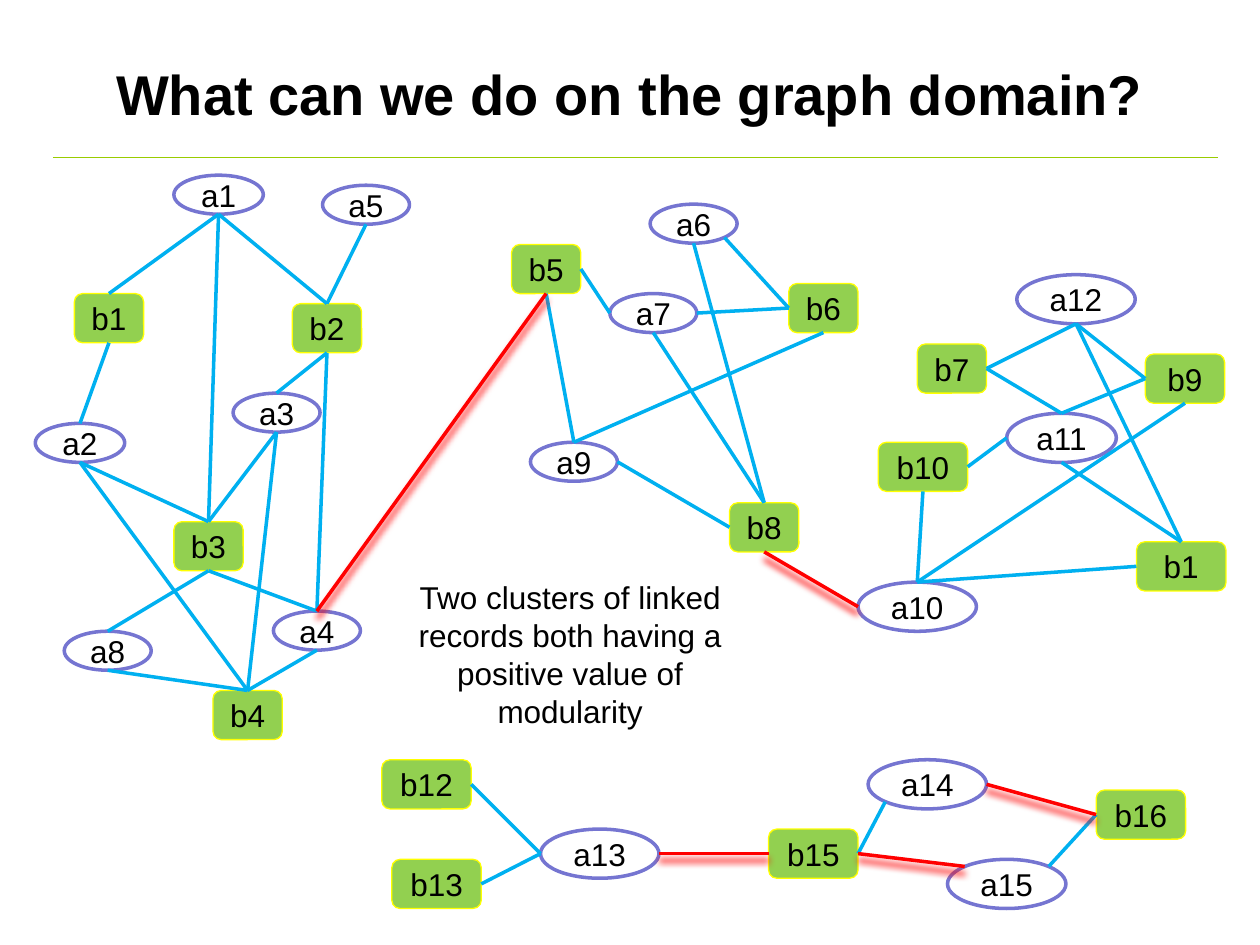
from lxml import etree
from pptx import Presentation
from pptx.dml.color import RGBColor
from pptx.enum.shapes import MSO_CONNECTOR, MSO_SHAPE
from pptx.enum.text import MSO_ANCHOR, PP_ALIGN
from pptx.oxml.ns import qn
from pptx.util import Inches, Pt

LINE = MSO_CONNECTOR.STRAIGHT
OVAL, BOX = MSO_SHAPE.OVAL, MSO_SHAPE.ROUNDED_RECTANGLE
CENTER, MIDDLE = PP_ALIGN.CENTER, MSO_ANCHOR.MIDDLE

BLACK = RGBColor(0x00, 0x00, 0x00)
WHITE = RGBColor(0xFF, 0xFF, 0xFF)
VIOLET = RGBColor(0x75, 0x75, 0xD1)
GREEN = RGBColor(0x92, 0xD0, 0x50)
YELLOW = RGBColor(0xFF, 0xFF, 0x00)
BLUE = RGBColor(0x00, 0xB0, 0xF0)
RED = RGBColor(0xFF, 0x00, 0x00)
OLIVE = RGBColor(0x99, 0xCC, 0x00)

# Node sizes
SMALL_OVAL, WIDE_OVAL = (0.69, 0.31), (0.94, 0.39)
SMALL_BOX, WIDE_BOX = (0.55, 0.39), (0.71, 0.39)

# Left and top of each node, grouped by shape and size
NODES = [
    (OVAL, (0.71, 0.31), {"a1": (1.38, 1.39), "a2": (0.28, 3.36)}),
    (OVAL, SMALL_OVAL, {
        "a3": (1.85, 3.12), "a4": (2.17, 4.85), "a5": (2.56, 1.47),
        "a6": (5.16, 1.62), "a7": (4.84, 2.33), "a8": (0.51, 5.01),
        "a9": (4.21, 3.51)}),
    (OVAL, (0.87, 0.39), {"a11": (7.99, 3.28)}),
    (OVAL, WIDE_OVAL, {
        "a10": (6.81, 4.62), "a12": (8.07, 2.18), "a13": (4.29, 6.58),
        "a14": (6.89, 6.03), "a15": (7.52, 6.82)}),
    (BOX, SMALL_BOX, {
        "b1": (0.59, 2.33), "b2": (2.32, 2.41), "b3": (1.38, 4.14),
        "b4": (1.69, 5.48), "b5": (4.06, 1.94), "b6": (6.26, 2.25),
        "b7": (7.28, 2.73), "b8": (5.79, 3.99)}),
    (BOX, (0.63, 0.39), {"b9": (9.09, 2.81)}),
    (BOX, WIDE_BOX, {
        "b10": (6.97, 3.51), "b1 right": (9.02, 4.3), "b12": (3.03, 6.03),
        "b13": (3.11, 6.82), "b15": (6.1, 6.58), "b16": (8.7, 6.27)}),
]

# Anchor points as shares of half the width and half the height
DIAG = 0.71
SIDES = {"T": (0, -1), "B": (0, 1), "L": (-1, 0), "R": (1, 0),
         "TL": (-DIAG, -DIAG), "TR": (DIAG, -DIAG),
         "BL": (-DIAG, DIAG), "BR": (DIAG, DIAG)}

# Node, side, node, side
LINKS = [
    ("a1", "B", "b1", "T"), ("a1", "B", "b2", "T"), ("a1", "B", "b3", "T"),
    ("b1", "B", "a2", "T"), ("b2", "B", "a3", "T"), ("b2", "B", "a4", "T"),
    ("b2", "T", "a5", "B"), ("a2", "B", "b3", "T"), ("a2", "B", "b4", "T"),
    ("a3", "B", "b3", "T"), ("a3", "B", "b4", "T"), ("b3", "B", "a8", "T"),
    ("b3", "B", "a4", "T"), ("a8", "B", "b4", "T"), ("a4", "B", "b4", "T"),
    ("b6", "L", "a7", "R"), ("a6", "B", "b8", "T"), ("a6", "BR", "b6", "L"),
    ("b5", "R", "a7", "L"), ("b5", "B", "a9", "T"), ("b6", "B", "a9", "T"),
    ("a9", "R", "b8", "L"), ("a7", "B", "b8", "T"), ("a12", "B", "b7", "R"),
    ("a12", "B", "b9", "L"), ("a12", "B", "b1 right", "T"),
    ("b9", "L", "a11", "T"), ("a11", "T", "b7", "R"), ("a11", "L", "b10", "R"),
    ("a11", "B", "b1 right", "T"), ("a10", "T", "b1 right", "L"),
    ("a10", "T", "b10", "B"), ("a10", "T", "b9", "B"),
    ("b15", "R", "a14", "BL"), ("b13", "R", "a13", "L"),
    ("b12", "R", "a13", "L"), ("a15", "TR", "b16", "L"),
]
BRIDGES = [
    ("a10", "L", "b8", "B"), ("a4", "T", "b5", "B"), ("b15", "L", "a13", "R"),
    ("b15", "R", "a15", "TL"), ("a14", "R", "b16", "L"),
]


def style_text(p, size=18, bold=False):
    p.alignment = CENTER
    p.font.name, p.font.size, p.font.bold = "Arial", Pt(size), bold
    p.font.color.rgb = BLACK


def add_title(s, text):
    title = s.shapes.title
    title.left, title.top = Inches(0.75), Inches(0.17)
    title.width, title.height = Inches(8.5), Inches(1.14)
    tf = title.text_frame
    tf.text, tf.vertical_anchor = text, MIDDLE
    style_text(tf.paragraphs[0], 32, True)


def add_node(s, kind, label, x, y, w, h):
    sp = s.shapes.add_shape(kind, Inches(x), Inches(y), Inches(w), Inches(h))
    fill, line, width = (WHITE, VIOLET, 2) if kind == OVAL else (GREEN, YELLOW, 0.75)
    sp.shadow.inherit = False
    sp.fill.solid()
    sp.fill.fore_color.rgb = fill
    sp.line.color.rgb, sp.line.width = line, Pt(width)
    tf = sp.text_frame
    tf.text, tf.vertical_anchor, tf.word_wrap = label, MIDDLE, False
    style_text(tf.paragraphs[0])
    return sp


def add_line(s, start, end, color, width=2, glow=False):
    line = s.shapes.add_connector(LINE, *start, *end)
    line.line.color.rgb, line.line.width = color, Pt(width)
    effects = etree.SubElement(line._element.spPr, qn("a:effectLst"))
    if glow:
        shadow = etree.SubElement(effects, qn("a:outerShdw"), blurRad=str(Pt(4)),
                                  dist=str(Pt(4)), dir="5400000", rotWithShape="0")
        etree.SubElement(shadow, qn("a:srgbClr"), val=str(color))


def anchor(sp, side):
    dx, dy = SIDES[side]
    return (int(sp.left + sp.width * (1 + dx) / 2),
            int(sp.top + sp.height * (1 + dy) / 2))


def add_caption(s, text):
    box = s.shapes.add_textbox(Inches(3.03), Inches(4.54), Inches(2.99), Inches(1.31))
    tf = box.text_frame
    tf.word_wrap, tf.text = True, text
    style_text(tf.paragraphs[0])


def main():
    prs = Presentation()
    prs.slide_width, prs.slide_height = Inches(10), Inches(7.5)
    s = prs.slides.add_slide(prs.slide_layouts[5])

    # Title and rule
    add_title(s, "What can we do on the graph domain?")
    add_line(s, (Inches(0.42), Inches(1.25)), (Inches(9.67), Inches(1.25)), OLIVE, 0.75)

    # Graph nodes
    nodes = {}
    for kind, size, places in NODES:
        for name, place in places.items():
            nodes[name] = add_node(s, kind, name.split()[0], *place, *size)

    # Links within clusters, then bridges between them
    for links, color in ((LINKS, BLUE), (BRIDGES, RED)):
        for a, side_a, b, side_b in links:
            add_line(s, anchor(nodes[a], side_a), anchor(nodes[b], side_b),
                     color, glow=color == RED)

    add_caption(s, "Two clusters of linked records both having "
                   "a positive value of modularity")
    prs.save("out.pptx")


if __name__ == "__main__":
    main()
